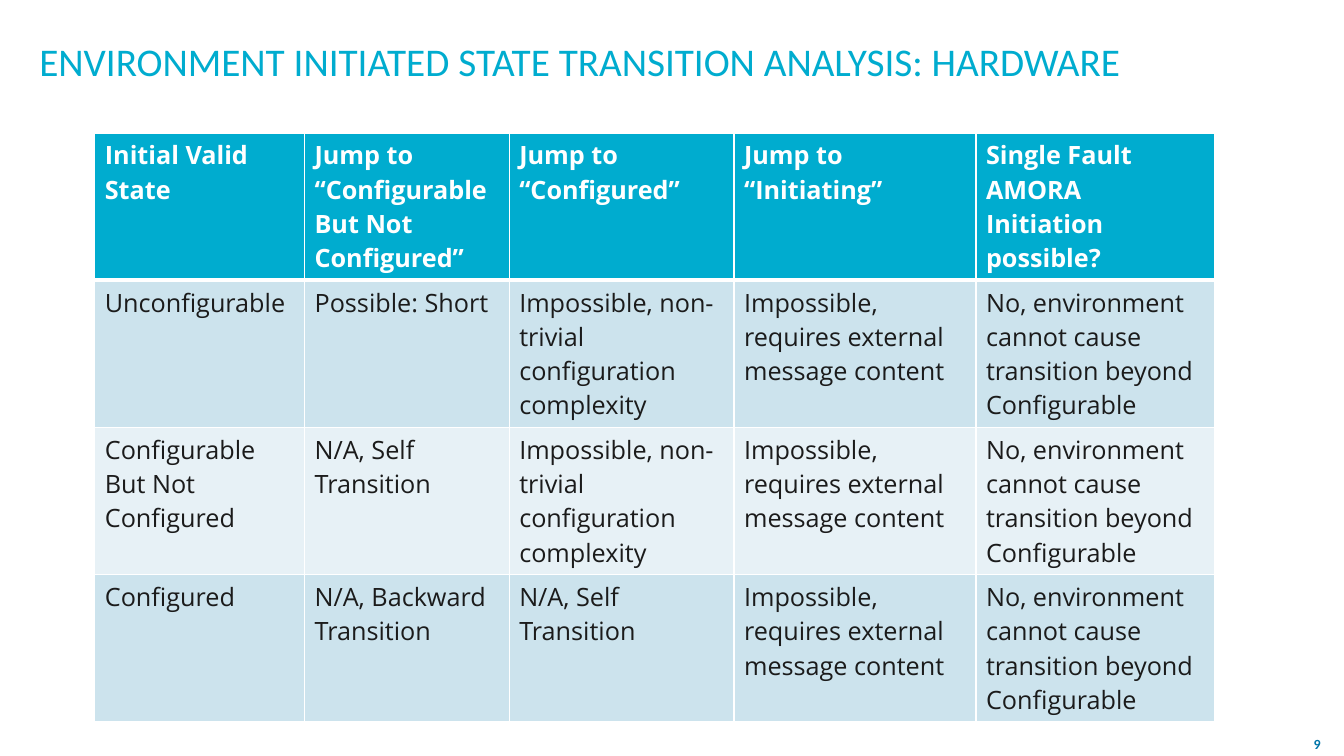
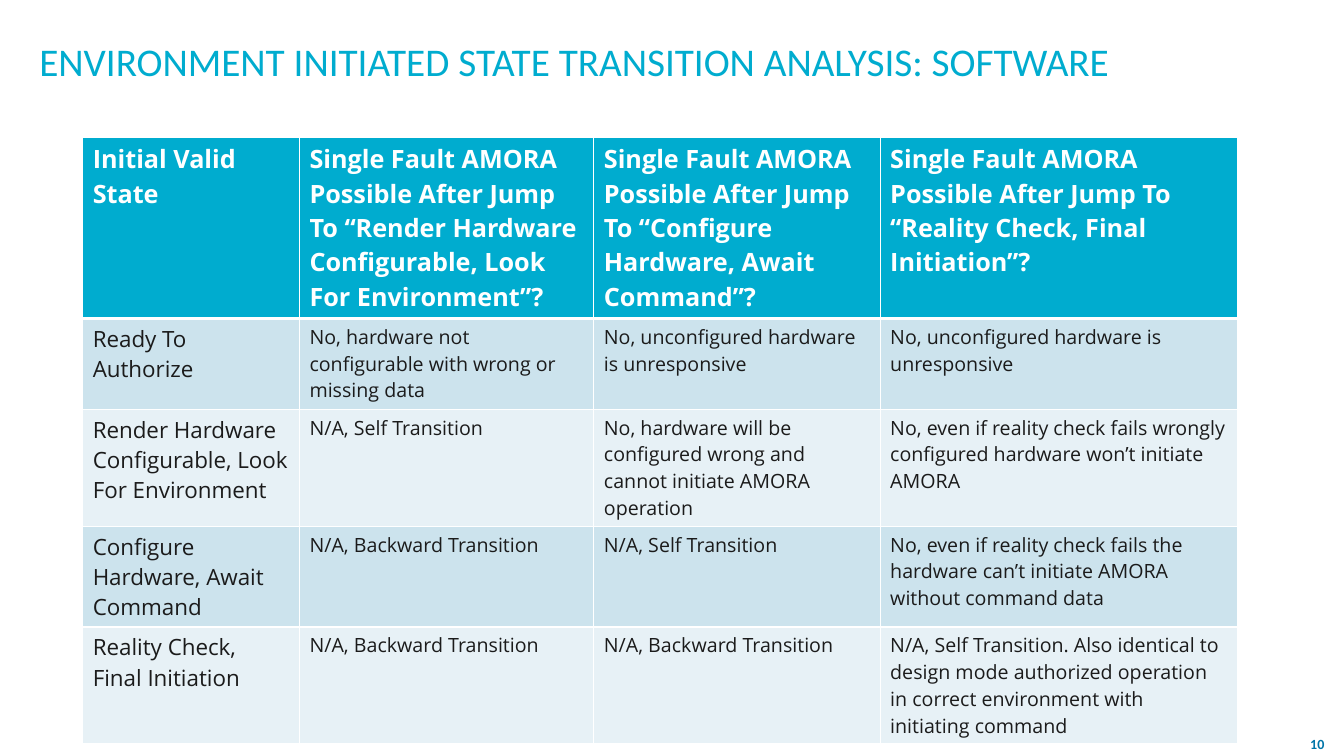
from dataclasses import dataclass

from lxml import etree
from pptx import Presentation
from pptx import util as u
from pptx.dml.color import RGBColor
from pptx.enum import text
from pptx.oxml import ns


@dataclass(frozen=True)
class Theme:
    accent: str = "00ACCF"
    number: str = "0075A9"
    ink: str = "1B1B1B"
    white: str = "FFFFFF"
    bands: tuple = ("CCE3ED", "E7F1F6")
    heading_font: str = "Calibri"
    table_font: str = "Open Sans"
    title_size: int = 28
    header_size: int = 18
    number_size: int = 10
    thin: int = 1
    thick: int = 3


theme = Theme()


def add_run(paragraph, words, font, size, color, bold=False):
    run = paragraph.add_run()
    run.text = words
    run.font.name = font
    run.font.size = u.Pt(size)
    run.font.bold = bold
    run.font.color.rgb = RGBColor.from_string(color)


def set_borders(cell, top, bottom):
    properties = cell._tc.get_or_add_tcPr()
    widths = {"lnL": theme.thin, "lnR": theme.thin, "lnT": top, "lnB": bottom}
    for position, (side, width) in enumerate(widths.items()):
        line = etree.Element(ns.qn(f"a:{side}"), w=str(u.Pt(width)))
        fill = etree.SubElement(line, ns.qn("a:solidFill"))
        etree.SubElement(fill, ns.qn("a:srgbClr"), val=theme.white)
        properties.insert(position, line)


no_escalation = "No, environment cannot cause transition beyond Configurable"
external_message = "Impossible, requires external message content"
complex_setup = "Impossible, non-trivial configuration complexity"
self_transition = "N/A, Self Transition"
backward = "N/A, Backward Transition"
unresponsive = "No, unconfigured hardware is unresponsive"

pages = [
    {
        "number": "9",
        "subject": "HARDWARE",
        "left": 0.94,
        "top": 1.32,
        "columns": [2.08, 2.03, 2.23, 2.4, 2.37],
        "heights": [1.46] * 4,
        "state_size": 18,
        "answer_size": 18,
        "rows": [
            ["Initial Valid State", "Jump to “Configurable But Not Configured”",
             "Jump to “Configured”", "Jump to “Initiating”",
             "Single Fault AMORA Initiation possible?"],
            ["Unconfigurable", "Possible: Short", complex_setup,
             external_message, no_escalation],
            ["Configurable But Not Configured", self_transition, complex_setup,
             external_message, no_escalation],
            ["Configured", backward, self_transition,
             external_message, no_escalation],
        ],
    },
    {
        "number": "10",
        "subject": "SOFTWARE",
        "left": 0.82,
        "top": 1.36,
        "columns": [2.15, 2.92, 2.84, 3.55],
        "heights": [1.8, 0.9, 1.16, 1.0, 1.16],
        "state_size": 16,
        "answer_size": 14,
        "rows": [
            ["Initial Valid State",
             "Single Fault AMORA Possible After Jump To “Render Hardware Configurable, Look For Environment”?",
             "Single Fault AMORA Possible After Jump To “Configure Hardware, Await Command”?",
             "Single Fault AMORA Possible After Jump To “Reality Check, Final Initiation”?"],
            ["Ready To Authorize",
             "No, hardware not configurable with wrong or missing data",
             unresponsive, unresponsive],
            ["Render Hardware Configurable, Look For Environment", self_transition,
             "No, hardware will be configured wrong and cannot initiate AMORA operation",
             "No, even if reality check fails wrongly configured hardware won’t initiate AMORA"],
            ["Configure Hardware, Await Command", backward, self_transition,
             "No, even if reality check fails the hardware can’t initiate AMORA without command data"],
            ["Reality Check, Final Initiation", backward, backward,
             "N/A, Self Transition. Also identical to design mode authorized operation "
             "in correct environment with initiating command"],
        ],
    },
]

presentation = Presentation()
presentation.slide_width = u.Inches(13.33)
presentation.slide_height = u.Inches(7.5)

for page in pages:
    slide = presentation.slides.add_slide(presentation.slide_layouts[6])

    number_box = slide.shapes.add_textbox(
        u.Inches(12.8), u.Inches(7.26), u.Inches(0.53), u.Inches(0.24))
    number_box.text_frame.word_wrap = True
    number_box.text_frame.vertical_anchor = text.MSO_ANCHOR.MIDDLE
    paragraph = number_box.text_frame.paragraphs[0]
    paragraph.alignment = text.PP_ALIGN.CENTER
    add_run(paragraph, page["number"], theme.heading_font, theme.number_size,
            theme.number, bold=True)

    title_box = slide.shapes.add_textbox(
        u.Inches(0.39), u.Inches(0.26), u.Inches(11.18), u.Inches(0.74))
    frame = title_box.text_frame
    frame.word_wrap = True
    frame.vertical_anchor = text.MSO_ANCHOR.MIDDLE
    frame.margin_left = frame.margin_right = frame.margin_top = frame.margin_bottom = 0
    paragraph = frame.paragraphs[0]
    paragraph.line_spacing = 0.9
    add_run(paragraph, f"ENVIRONMENT INITIATED STATE TRANSITION ANALYSIS: {page['subject']}",
            theme.heading_font, theme.title_size, theme.accent)

    rows, columns, heights = page["rows"], page["columns"], page["heights"]
    table = slide.shapes.add_table(
        len(rows), len(columns), u.Inches(page["left"]), u.Inches(page["top"]),
        u.Inches(sum(columns)), u.Inches(sum(heights))).table
    table.horz_banding = False
    for column, width in zip(table.columns, columns):
        column.width = u.Inches(width)

    for row_index, row in enumerate(rows):
        table.rows[row_index].height = u.Inches(heights[row_index])
        is_header = row_index == 0
        fill_color = theme.accent if is_header else theme.bands[(row_index - 1) % 2]
        text_color = theme.white if is_header else theme.ink
        top = theme.thick if row_index == 1 else theme.thin
        bottom = theme.thick if is_header else theme.thin
        for column_index, words in enumerate(row):
            cell = table.cell(row_index, column_index)
            cell.fill.solid()
            cell.fill.fore_color.rgb = RGBColor.from_string(fill_color)
            set_borders(cell, top, bottom)
            if is_header:
                size = theme.header_size
            else:
                size = page["state_size"] if column_index == 0 else page["answer_size"]
            add_run(cell.text_frame.paragraphs[0], words, theme.table_font, size,
                    text_color, bold=is_header)

presentation.save("out.pptx")
